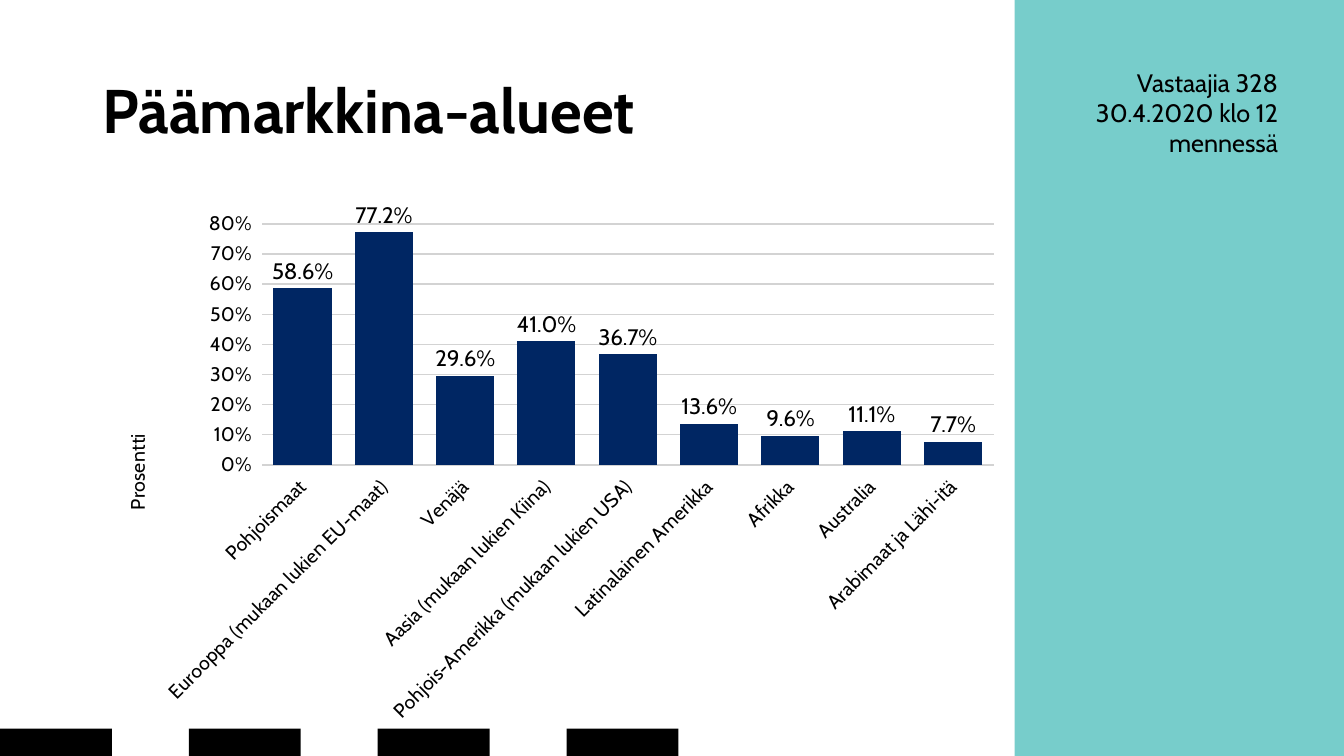
from lxml.etree import SubElement
from pptx import Presentation
from pptx.chart.data import CategoryChartData
from pptx.dml.color import RGBColor
from pptx.enum.chart import XL_CHART_TYPE, XL_LABEL_POSITION, XL_TICK_MARK
from pptx.enum.shapes import MSO_SHAPE
from pptx.enum.text import MSO_ANCHOR, MSO_AUTO_SIZE, PP_ALIGN
from pptx.oxml.ns import qn
from pptx.util import Cm, Pt

FONT = "Cabin"
COLORS = {"panel": "77CDCB", "ink": "000000", "bar": "002663", "grid": "D3D3D3"}
MARKETS = {
    "Pohjoismaat": 0.586,
    "Eurooppa (mukaan lukien EU-maat)": 0.772,
    "Venäjä": 0.296,
    "Aasia (mukaan lukien Kiina)": 0.41,
    "Pohjois-Amerikka (mukaan lukien USA)": 0.367,
    "Latinalainen Amerikka": 0.136,
    "Afrikka": 0.096,
    "Australia": 0.111,
    "Arabimaat ja Lähi-itä": 0.077,
}


def color(name):
    """Return a palette colour."""
    return RGBColor.from_string(COLORS[name])


def set_font(font, size, bold=False):
    """Apply the slide typeface in black."""
    font.name = FONT
    font.size = Pt(size)
    font.bold = bold
    font.color.rgb = color("ink")


def add_block(slide, left, top, width, height, fill):
    """Add a plain rectangle."""
    shape = slide.shapes.add_shape(
        MSO_SHAPE.RECTANGLE, Cm(left), Cm(top), Cm(width), Cm(height))
    shape.shadow.inherit = False
    shape.fill.solid()
    shape.fill.fore_color.rgb = color(fill)
    shape.line.fill.background()


def format_title(slide, text):
    """Place and fill the title placeholder."""
    title = slide.shapes.title
    title.left, title.top, title.width, title.height = (
        Cm(2.33), Cm(1.01), Cm(29.21), Cm(3.68))
    title.text_frame.text = text
    title.text_frame.vertical_anchor = MSO_ANCHOR.MIDDLE
    paragraph = title.text_frame.paragraphs[0]
    paragraph.alignment = PP_ALIGN.LEFT
    paragraph.line_spacing = 0.9
    set_font(paragraph.font, 44, bold=True)


def add_note(slide, lines):
    """Add the right-aligned respondent note."""
    frame = slide.shapes.add_textbox(Cm(27.2), Cm(1.57), Cm(5.26), Cm(2.57)).text_frame
    frame.word_wrap = True
    frame.auto_size = MSO_AUTO_SIZE.SHAPE_TO_FIT_TEXT
    frame.text = "\n".join(lines)
    for paragraph in frame.paragraphs:
        paragraph.alignment = PP_ALIGN.RIGHT
        set_font(paragraph.font, 18)


def set_layout(parent, index, **settings):
    """Give a chart part a manual layout."""
    for old_layout in parent.findall(qn("c:layout")):
        parent.remove(old_layout)
    layout = SubElement(parent, qn("c:layout"))
    manual = SubElement(layout, qn("c:manualLayout"))
    for name, value in settings.items():
        SubElement(manual, qn(f"c:{name}")).set("val", str(value))
    parent.insert(index, layout)


def rotate_text(element, degrees):
    """Rotate the text of a chart part."""
    body = next(element.iter(qn("a:bodyPr")))
    body.set("rot", str(degrees * 60000))
    body.set("vert", "horz")


def format_axis(axis):
    """Set what both axes share."""
    axis.major_tick_mark = XL_TICK_MARK.CROSS
    axis.minor_tick_mark = XL_TICK_MARK.NONE
    axis.format.line.fill.background()
    set_font(axis.tick_labels.font, 14)


def format_value_axis(axis):
    """Set scale, gridlines and title of the percentage axis."""
    format_axis(axis)
    axis.minimum_scale, axis.maximum_scale, axis.major_unit = 0, 0.8, 0.1
    axis.tick_labels.number_format = "0%"
    axis.tick_labels.number_format_is_linked = False
    axis.major_gridlines.format.line.color.rgb = color("grid")
    axis.major_gridlines.format.line.width = Pt(1)
    title = axis.axis_title
    title.text_frame.text = "Prosentti"
    set_font(title.text_frame.paragraphs[0].font, 14)
    rotate_text(title._element, -90)
    set_layout(title._element, 1, xMode="edge", yMode="edge", x=0.03, y=0.43)


def format_bars(plot):
    """Set bars and their value labels."""
    plot.gap_width = 40
    plot.vary_by_categories = False
    bars = plot.series[0]
    bars.invert_if_negative = False
    bars.format.fill.solid()
    bars.format.fill.fore_color.rgb = color("bar")
    bars.format.line.fill.background()
    labels = bars.data_labels
    labels.show_value = True
    labels.number_format = "0.0%"
    labels.number_format_is_linked = False
    labels.position = XL_LABEL_POSITION.OUTSIDE_END
    set_font(labels.font, 16)


def add_market_chart(slide):
    """Add the column chart of market areas."""
    data = CategoryChartData()
    data.categories = list(MARKETS)
    data.add_series("Series 1", list(MARKETS.values()))
    chart = slide.shapes.add_chart(
        XL_CHART_TYPE.COLUMN_CLUSTERED,
        Cm(2.33), Cm(5.08), Cm(23.2), Cm(13.41), data).chart
    chart.has_legend = False
    chart.has_title = False
    set_font(chart.font, 18)
    format_axis(chart.category_axis)
    rotate_text(chart.category_axis._element, -45)
    format_value_axis(chart.value_axis)
    format_bars(chart.plots[0])
    plot_area = next(chart._chartSpace.iter(qn("c:plotArea")))
    set_layout(plot_area, 0, layoutTarget="inner", xMode="edge", yMode="edge",
               x=0.184, y=0.042, w=0.795, h=0.453)


def main():
    """Build and save the slide."""
    presentation = Presentation()
    presentation.slide_width, presentation.slide_height = Cm(33.87), Cm(19.05)
    slide = presentation.slides.add_slide(presentation.slide_layouts[5])
    add_block(slide, 25.57, 0, 8.3, 19.05, "panel")
    for index in range(4):
        add_block(slide, index * 4.76, 18.36, 2.82, 0.69, "ink")
    format_title(slide, "Päämarkkina-alueet")
    title_element = slide.shapes.title._element
    title_element.getparent().append(title_element)
    add_note(slide, ["Vastaajia 328", "30.4.2020 klo 12 mennessä"])
    add_market_chart(slide)
    presentation.save("out.pptx")


if __name__ == "__main__":
    main()
